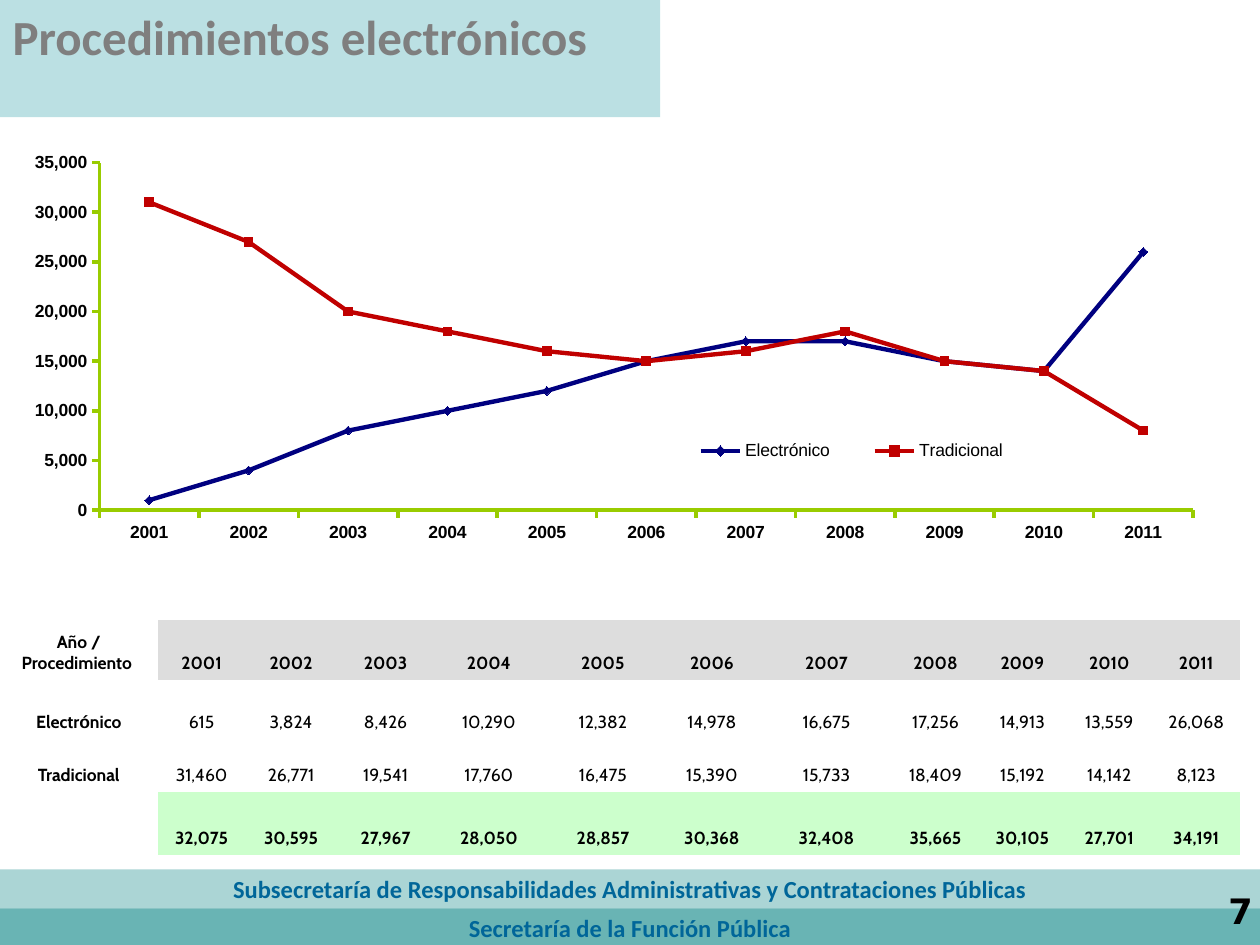
from dataclasses import dataclass

from lxml import etree
from pptx import Presentation
from pptx.chart.data import CategoryChartData
from pptx.dml.color import RGBColor
from pptx.enum.chart import XL_CHART_TYPE as ChartType, XL_LEGEND_POSITION as LegendPosition
from pptx.enum.chart import XL_MARKER_STYLE as Marker, XL_TICK_MARK as TickMark
from pptx.enum.shapes import MSO_SHAPE as Shape
from pptx.enum.text import MSO_ANCHOR as Anchor, PP_ALIGN as Align
from pptx.oxml import parse_xml
from pptx.oxml.ns import nsdecls, qn
from pptx.util import Inches, Pt


@dataclass(frozen=True)
class Theme:
    black: str = "000000"
    white: str = "FFFFFF"
    title: str = "7F7F7F"
    title_bar: str = "BBE0E3"
    band: str = "008080"
    band_text: str = "006699"
    axis: str = "99CC00"
    electronic: str = "000080"
    traditional: str = "C00000"
    header_fill: str = "DDDDDD"
    total_fill: str = "CCFFCC"
    title_size: float = 28
    band_size: float = 14
    number_size: float = 20
    small_size: float = 10
    chart_size: float = 8.5


theme = Theme()


def style_font(font, name, size, color, bold=False):
    font.name, font.size, font.bold = name, Pt(size), bold
    font.color.rgb = RGBColor.from_string(color)


def add_bar(left, top, width, height, color):
    bar = slide.shapes.add_shape(
        Shape.RECTANGLE, Inches(left), Inches(top), Inches(width), Inches(height))
    bar.shadow.inherit = False
    bar.fill.solid()
    bar.fill.fore_color.rgb = RGBColor.from_string(color)
    bar.line.fill.background()
    return bar


years = [str(year) for year in range(2001, 2012)]
electronic = [615, 3824, 8426, 10290, 12382, 14978, 16675, 17256, 14913, 13559, 26068]
traditional = [31460, 26771, 19541, 17760, 16475, 15390, 15733, 18409, 15192, 14142, 8123]
totals = [sum(pair) for pair in zip(electronic, traditional)]

prs = Presentation()
prs.slide_width, prs.slide_height = Inches(10), Inches(7.5)
slide = prs.slides.add_slide(prs.slide_layouts[5])

# Title, with its bar behind it
title = slide.shapes.title
title.left, title.top, title.width, title.height = 0, 0, Inches(5.16), Inches(0.57)
title.text_frame.text = "Procedimientos electrónicos"
title.text_frame.vertical_anchor = Anchor.TOP
title.text_frame.paragraphs[0].alignment = Align.LEFT
style_font(title.text_frame.paragraphs[0].runs[0].font,
           "Calibri", theme.title_size, theme.title, True)
title_bar = add_bar(0, 0, 5.24, 0.93, theme.title_bar)
title._element.addprevious(title_bar._element)

# Footer bands
add_bar(0, 6.61, 10, 0.91, theme.white)
for top, opacity, office in (
    (7.21, 59, "Secretaría de la Función Pública"),
    (6.9, 33, "Subsecretaría de Responsabilidades Administrativas y Contrataciones Públicas"),
):
    band = add_bar(0, top, 10, 0.31, theme.band)
    rgb = band._element.spPr.find(qn("a:solidFill")).find(qn("a:srgbClr"))
    etree.SubElement(rgb, qn("a:alpha")).set("val", str(opacity * 1000))
    band.text_frame.text = office
    band.text_frame.word_wrap = False
    band.text_frame.vertical_anchor = Anchor.MIDDLE
    band.text_frame.paragraphs[0].alignment = Align.CENTER
    style_font(band.text_frame.paragraphs[0].runs[0].font,
               "Calibri", theme.band_size, theme.band_text, True)

# Table of procedures by year
rows = [
    ("Año / Procedimiento ", years, theme.header_fill, True),
    ("Electrónico", electronic, None, False),
    ("Tradicional", traditional, None, False),
    ("", totals, theme.total_fill, True),
]
column_widths = [1.25, 0.7, 0.72, 0.78, 0.86, 0.95, 0.78, 1.04] + [0.69] * 4
row_heights = [0.48, 0.47, 0.42, 0.5]
table = slide.shapes.add_table(
    len(rows), len(column_widths), 0, Inches(4.92), Inches(9.84), Inches(1.87)).table
table.first_row = table.horz_banding = False
no_grid_style = "{2D5ABB26-0587-4C30-8999-92F81FD0307C}"
table._tbl.tblPr.find(qn("a:tableStyleId")).text = no_grid_style
for column, width in zip(table.columns, column_widths):
    column.width = Inches(width)
for row, height, (label, values, fill, bold) in zip(table.rows, row_heights, rows):
    row.height = Inches(height)
    figures = [v if isinstance(v, str) else f"{v:,}" for v in values]
    for index, (cell, text) in enumerate(zip(row.cells, [label] + figures)):
        cell.vertical_anchor = Anchor.BOTTOM
        paragraph = cell.text_frame.paragraphs[0]
        paragraph.alignment = Align.CENTER
        if fill and index:
            cell.fill.solid()
            cell.fill.fore_color.rgb = RGBColor.from_string(fill)
        else:
            cell.fill.background()
        # The accented letter is set in Arial
        for piece in filter(None, text.partition("ó")):
            run = paragraph.add_run()
            run.text = piece
            style_font(run.font, "Arial" if piece == "ó" else "Cabin",
                       theme.small_size, theme.black, bold or index == 0)

# Line chart, in whole thousands
chart_width, chart_height = 9.38, 3.76
chart_data = CategoryChartData(number_format="#,##0")
chart_data.categories = years
chart_data.add_series("Electrónico", [round(v, -3) for v in electronic])
chart_data.add_series("Tradicional", [round(v, -3) for v in traditional])
chart = slide.shapes.add_chart(
    ChartType.LINE_MARKERS, Inches(0.23), Inches(1.02),
    Inches(chart_width), Inches(chart_height), chart_data).chart
style_font(chart.font, "Arial", theme.chart_size, theme.black)
chart.has_title = False
plot = chart.plots[0]
plot.vary_by_categories = False
for series, color, marker in zip(plot.series, (theme.electronic, theme.traditional),
                                 (Marker.DIAMOND, Marker.SQUARE)):
    series.smooth = False
    series.format.line.width = Pt(2.5)
    series.marker.style, series.marker.size = marker, 5
    series.marker.format.fill.solid()
    series.marker.format.fill.fore_color.rgb = RGBColor.from_string(color)
    for line in (series.format.line, series.marker.format.line):
        line.color.rgb = RGBColor.from_string(color)

# Axes and legend
for axis in (chart.category_axis, chart.value_axis):
    axis.has_major_gridlines = False
    axis.major_tick_mark, axis.minor_tick_mark = TickMark.OUTSIDE, TickMark.NONE
    axis.format.line.color.rgb = RGBColor.from_string(theme.axis)
    axis.format.line.width = Pt(2)
    style_font(axis.tick_labels.font, "Arial", theme.small_size, theme.black, True)
chart.value_axis.minimum_scale, chart.value_axis.maximum_scale = 0, 35000
chart.value_axis.major_unit = 5000
chart.value_axis.tick_labels.number_format = "#,##0"
chart.value_axis.tick_labels.number_format_is_linked = False
chart.has_legend = True
chart.legend.position = LegendPosition.BOTTOM
chart.legend.include_in_layout = False
style_font(chart.legend.font, "Arial", theme.small_size, theme.black)

# Fixed places for the plot area and the legend, in inches within the chart
plot_area = chart._chartSpace.chart.plotArea
legend = chart.legend._element
chart_size = (chart_width, chart_height) * 2
for parent, target, box in (
    (plot_area, '<c:layoutTarget val="inner"/>', (0.56, 0.27, 8.68, 2.76)),
    (legend, "", (5.02, 2.43, 3.02, 0.26)),
):
    for old_layout in parent.findall(qn("c:layout")):
        parent.remove(old_layout)
    modes = '<c:xMode val="edge"/><c:yMode val="edge"/>'
    sizes = "".join(f'<c:{side} val="{length / whole}"/>'
                    for side, length, whole in zip("xywh", box, chart_size))
    layout = parse_xml(f'<c:layout {nsdecls("c")}><c:manualLayout>{target}{modes}{sizes}'
                       "</c:manualLayout></c:layout>")
    if parent is legend:
        legend.find(qn("c:legendPos")).addnext(layout)
    else:
        parent.insert(0, layout)

# Page number
page_number = slide.shapes.add_textbox(Inches(9.65), Inches(7.01), Inches(0.31), Inches(0.44))
page_number.text_frame.text = "7"
page_number.text_frame.word_wrap = True
style_font(page_number.text_frame.paragraphs[0].runs[0].font,
           "DejaVu Sans", theme.number_size, theme.black, True)

prs.save("out.pptx")
